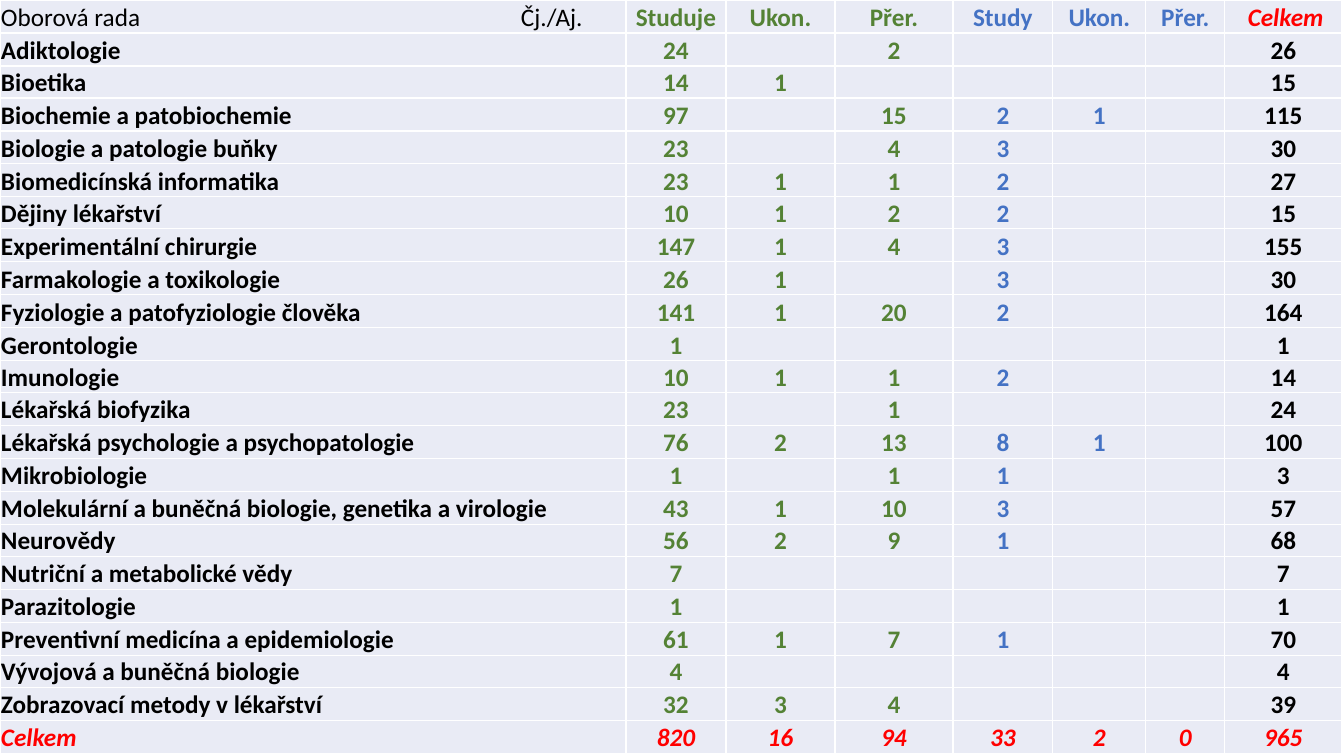
from lxml import etree
from pptx import Presentation
from pptx import util as u
from pptx.dml.color import RGBColor
from pptx.enum import text
from pptx.oxml.ns import qn

PX = 914400 / 100.8
BLACK, GREEN, BLUE, RED, WHITE, PALE = "000000", "548235", "4472C4", "FF0000", "FFFFFF", "E9EBF5"


def px(n):
    return u.Emu(round(n * PX))


def color(hex_string):
    return RGBColor.from_string(hex_string)


def write(frame, words, ink=BLACK, bold=True, italic=False, center=True, indent=0, tab=0):
    paragraph = frame.paragraphs[0]
    paragraph.alignment = text.PP_ALIGN.CENTER if center else text.PP_ALIGN.LEFT
    props = paragraph._p.get_or_add_pPr()
    if indent:
        props.set("marL", str(px(indent)))
    if tab:
        stops = etree.SubElement(props, qn("a:tabLst"))
        etree.SubElement(stops, qn("a:tab"), pos=str(px(tab)), algn="l")
    run = paragraph.add_run()
    run.text = words
    font = run.font
    font.name, font.size = "Calibri", u.Pt(18)
    font.bold, font.italic = bold, italic
    font.color.rgb = color(ink)


class Slide:
    def __init__(self, deck):
        self.slide = deck.slides.add_slide(deck.slide_layouts[6])
        self.fill, self.rule = PALE, WHITE

    def border(self, cell):
        props = cell._tc.get_or_add_tcPr()
        for place, side in enumerate(("a:lnL", "a:lnR", "a:lnT", "a:lnB")):
            line = etree.Element(qn(side), w=str(u.Pt(1)))
            paint = etree.SubElement(line, qn("a:solidFill"))
            etree.SubElement(paint, qn("a:srgbClr"), val=self.rule)
            props.insert(place, line)

    def table(self, widths, row_count, height):
        frame = self.slide.shapes.add_table(row_count, len(widths), 0, 0, px(sum(widths)), px(height))
        table = frame.table
        table.first_row = table.horz_banding = False
        for column, width in zip(table.columns, widths):
            column.width = px(width)
        # Row edges are shared out evenly over the full height
        edges = [round(height * i / row_count) for i in range(row_count + 1)]
        for row, top, bottom in zip(table.rows, edges, edges[1:]):
            row.height = px(bottom - top)
        for cell in table.iter_cells():
            cell.margin_left = cell.margin_right = cell.margin_top = px(1)
            cell.margin_bottom = 0
            cell.vertical_anchor = text.MSO_ANCHOR.BOTTOM
            cell.fill.solid()
            cell.fill.fore_color.rgb = color(self.fill)
            self.border(cell)
        return table


# Students per board: Czech studying, finished, interrupted, then the same in English
BOARDS = [
    ("Adiktologie", 24, 0, 2, 0, 0, 0),
    ("Bioetika", 14, 1, 0, 0, 0, 0),
    ("Biochemie a patobiochemie", 97, 0, 15, 2, 1, 0),
    ("Biologie a patologie buňky", 23, 0, 4, 3, 0, 0),
    ("Biomedicínská informatika", 23, 1, 1, 2, 0, 0),
    ("Dějiny lékařství", 10, 1, 2, 2, 0, 0),
    ("Experimentální chirurgie", 147, 1, 4, 3, 0, 0),
    ("Farmakologie a toxikologie", 26, 1, 0, 3, 0, 0),
    ("Fyziologie a patofyziologie člověka", 141, 1, 20, 2, 0, 0),
    ("Gerontologie", 1, 0, 0, 0, 0, 0),
    ("Imunologie", 10, 1, 1, 2, 0, 0),
    ("Lékařská biofyzika", 23, 0, 1, 0, 0, 0),
    ("Lékařská psychologie a psychopatologie", 76, 2, 13, 8, 1, 0),
    ("Mikrobiologie", 1, 0, 1, 1, 0, 0),
    ("Molekulární a buněčná biologie, genetika a virologie", 43, 1, 10, 3, 0, 0),
    ("Neurovědy", 56, 2, 9, 1, 0, 0),
    ("Nutriční a metabolické vědy", 7, 0, 0, 0, 0, 0),
    ("Parazitologie", 1, 0, 0, 0, 0, 0),
    ("Preventivní medicína a epidemiologie", 61, 1, 7, 1, 0, 0),
    ("Vývojová a buněčná biologie", 4, 0, 0, 0, 0, 0),
    ("Zobrazovací metody v lékařství", 32, 3, 4, 0, 0, 0),
]
STATES = ["Studuje", "Ukon.", "Přer.", "Study", "Ukon.", "Přer."]
INKS = [GREEN] * 3 + [BLUE] * 3
WIDTHS = [626, 100, 109, 118, 100, 93, 79, 117]


def main():
    deck = Presentation()
    deck.slide_width, deck.slide_height = px(1344), px(756)
    overview = Slide(deck).table(WIDTHS, len(BOARDS) + 2, 754)

    def put(row, column, words, **style):
        write(overview.cell(row, column).text_frame, str(words), **style)

    # Heading row
    put(0, 0, "Oborová rada\tČj./Aj.", bold=False, center=False, tab=520)
    for column, (state, ink) in enumerate(zip(STATES, INKS), 1):
        put(0, column, state, ink=ink)
    put(0, 7, "Celkem", ink=RED, italic=True, center=False, indent=22)

    # One row per board; zero counts stay empty
    for row, (board, *counts) in enumerate(BOARDS, 1):
        put(row, 0, board, center=False)
        for column, (count, ink) in enumerate(zip(counts, INKS), 1):
            if count:
                put(row, column, count, ink=ink)
        put(row, 7, sum(counts))

    # Totals row
    last = len(BOARDS) + 1
    totals = [sum(counts) for counts in list(zip(*BOARDS))[1:]]
    put(last, 0, "Celkem", ink=RED, italic=True, center=False)
    for column, total in enumerate(totals + [sum(totals)], 1):
        put(last, column, total, ink=RED, italic=True)

    deck.save("out.pptx")


if __name__ == "__main__":
    main()
